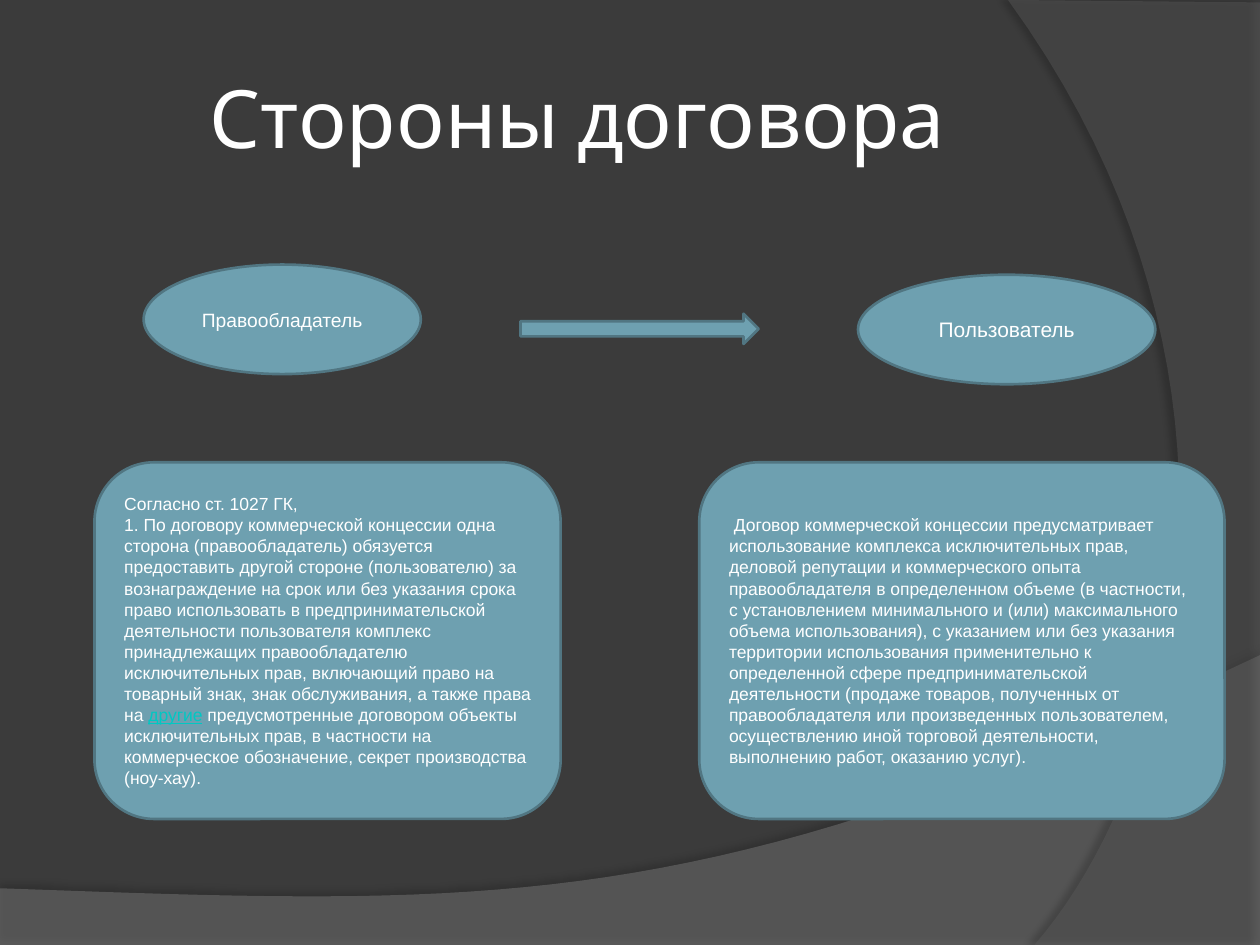
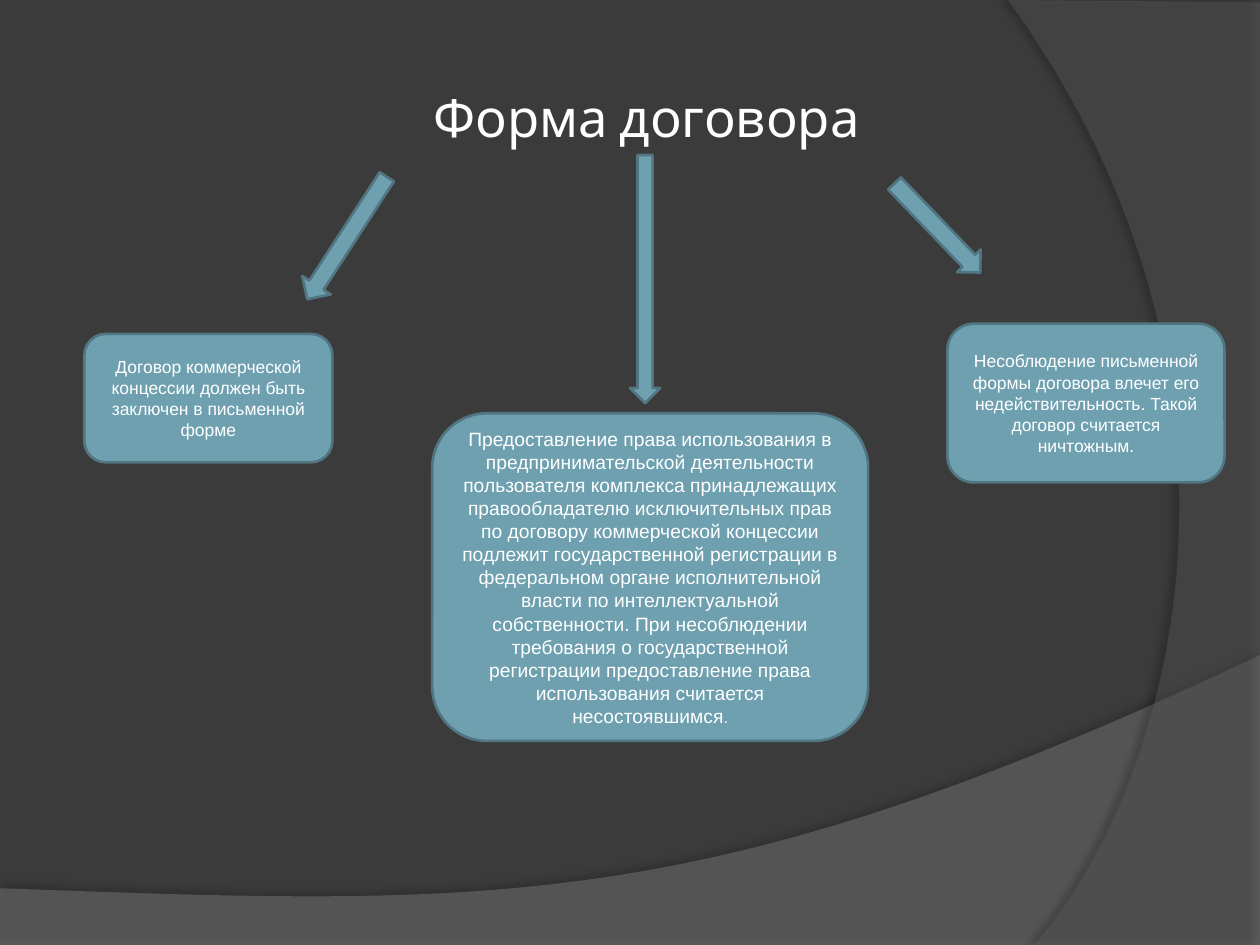
"""Build two slides on the parties to and the form of a franchise contract."""
from lxml import etree as et
from pptx import Presentation, dml, util as u
from pptx.dml import color
from pptx.enum import shapes, text
from pptx.oxml import ns

BACK, WHITE, TEAL, EDGE, LINK = "3B3B3B", "FFFFFF", "6EA0B0", "517682", "00C8C3"
WIDE, HIGH = 720, 540
KIND = shapes.MSO_SHAPE
CARD, OVAL, RIGHT, DOWN = (KIND.ROUNDED_RECTANGLE, KIND.OVAL,
                           KIND.RIGHT_ARROW, KIND.DOWN_ARROW)
LEFT, MID = text.PP_ALIGN.LEFT, text.PP_ALIGN.CENTER


def rgb(code):
    return color.RGBColor.from_string(code)


def write(shape, paras, align, size, face="Arial"):
    frame = shape.text_frame
    style = {"word_wrap": True, "vertical_anchor": text.MSO_ANCHOR.MIDDLE}
    for key, val in style.items():
        setattr(frame, key, val)
    for num, runs in enumerate(paras):
        para = frame.add_paragraph() if num else frame.paragraphs[0]
        para.alignment = align
        for words, extra in runs:
            run = para.add_run()
            run.text = words
            form = {"size": u.Pt(size), "name": face, "tone": WHITE} | extra
            run.font.color.rgb = rgb(form.pop("tone"))
            for key, val in form.items():
                setattr(run.font, key, val)


floor = {"start": (0, 507.6), "lines": [(0, HIGH), (WIDE, HIGH), (WIDE, 374.4)],
         "curve": [(402.5, 524.9), (281.5, 517.7), (0, 507.6)], "end": [],
         "tone": "7F7F7F", "alpha": 45, "shade": (35, 4, 3.5, 270)}
side = {"start": (WIDE, 1.4), "lines": [(WIDE, HIGH), (591.1, HIGH)],
        "curve": [(673.2, 445.7), (733, 216), (576, 0)], "end": [(WIDE, 1.4)],
        "tone": "5E5E5E", "alpha": 40, "shade": (45, 4, 4, 180)}

grant = [
    [("Согласно ст. 1027 ГК,", {})],
    [("1. По договору коммерческой концессии одна сторона (правообладатель) "
      "обязуется предоставить другой стороне (пользователю) за вознаграждение "
      "на срок или без указания срока право использовать в предпринимательской "
      "деятельности пользователя комплекс принадлежащих правообладателю "
      "исключительных прав, включающий право на товарный знак, знак "
      "обслуживания, а также права на ", {}),
     ("другие", {"tone": LINK, "underline": True}),
     (" предусмотренные договором объекты исключительных прав, в частности "
      "на коммерческое обозначение, секрет производства (ноу-хау).", {})]]
scope = [[(
    " Договор коммерческой концессии предусматривает использование комплекса "
    "исключительных прав, деловой репутации и коммерческого опыта "
    "правообладателя в определенном объеме (в частности, с установлением "
    "минимального и (или) максимального объема использования), с указанием или "
    "без указания территории использования применительно к определенной сфере "
    "предпринимательской деятельности (продаже товаров, полученных от "
    "правообладателя или произведенных пользователем, осуществлению иной "
    "торговой деятельности, выполнению работ, оказанию услуг).", {})]]
paper = [[("Договор коммерческой концессии должен быть заключен в письменной "
           "форме", {})]]
state = [[(
    "Предоставление права использования в предпринимательской деятельности "
    "пользователя комплекса принадлежащих правообладателю исключительных прав "
    "по договору коммерческой концессии подлежит государственной регистрации "
    "в федеральном органе исполнительной власти по интеллектуальной "
    "собственности. При несоблюдении требования о государственной регистрации "
    "предоставление права использования считается несостоявшимся", {}),
    (".", {"size": u.Pt(9)})]]
breach = [[("Несоблюдение письменной формы договора влечет его "
            "недействительность. Такой договор считается ничтожным.", {})]]
owner = [[("Правообладатель", {})]]
user = [[("Пользователь", {})]]

pages = [
    {"title": "Стороны договора", "size": 46, "align": MID, "indent": 0,
     "items": [
         (CARD, (54, 264.2, 266.4, 203.8), grant, LEFT, 10),
         (OVAL, (82.1, 151.2, 158.4, 62.6), owner, MID, 11),
         (CARD, (399.6, 264.2, 300.2, 203.8), scope, LEFT, 10),
         (OVAL, (490.3, 157, 169.9, 62.6), user, MID, 12)],
     "arrows": [(RIGHT, (297.4, 179.3, 136.1, 17.3), 0, 0.5)]},
    {"title": "Форма договора", "size": 30, "align": LEFT, "indent": 208,
     "items": [
         (CARD, (48.2, 190.8, 141.8, 73.4), paper, MID, 10),
         (CARD, (247, 236.2, 249.1, 187.2), state, MID, 11),
         (CARD, (541.4, 185, 158.4, 90.7), breach, MID, 10)],
     "arrows": [(DOWN, (188.6, 94.3, 19.4, 83.5), 33, 0.5),
                (DOWN, (360, 88.6, 17.3, 141.8), 0, 0.5),
                (DOWN, (526.3, 95, 18.7, 70.6), 316.1, 0.54)]}]

deck = Presentation()
deck.slide_width, deck.slide_height = u.Pt(WIDE), u.Pt(HIGH)

for page in pages:
    slide = deck.slides.add_slide(deck.slide_layouts[6])
    slide.background.fill.solid()
    slide.background.fill.fore_color.rgb = rgb(BACK)

    for band in (floor, side):
        dots = list(band["lines"])
        knots = [dots[-1], *band["curve"]]
        for step in range(1, 41):
            t = step / 40
            parts = ((1 - t) ** 3, 3 * t * (1 - t) ** 2, 3 * t * t * (1 - t), t ** 3)
            dots.append([sum(w * k[axis] for w, k in zip(parts, knots))
                         for axis in (0, 1)])
        dots += band["end"]
        pen = slide.shapes.build_freeform(*map(u.Pt, band["start"]))
        pen.add_line_segments([(u.Pt(x), u.Pt(y)) for x, y in dots])
        wave = pen.convert_to_shape()
        wave.fill.solid()
        wave.fill.fore_color.rgb = rgb(band["tone"])
        wave.line.fill.background()
        wave.shadow.inherit = False
        props = wave.element.spPr
        tint = props.find(ns.qn("a:solidFill"))[0]
        et.SubElement(tint, ns.qn("a:alpha"), val=str(band["alpha"] * 1000))
        dark, blur, dist, turn = band["shade"]
        cast = et.SubElement(props.find(ns.qn("a:effectLst")), ns.qn("a:outerShdw"),
                             blurRad=str(u.Pt(blur)), dist=str(u.Pt(dist)),
                             dir=str(turn * 60000), rotWithShape="0")
        black = et.SubElement(cast, ns.qn("a:srgbClr"), val="000000")
        et.SubElement(black, ns.qn("a:alpha"), val=str(dark * 1000))

    head = slide.shapes.add_textbox(*map(u.Pt, (36, 21.6, 588.2, 90)))
    for edge in ("left", "right", "top", "bottom"):
        setattr(head.text_frame, f"margin_{edge}", u.Pt(3.6))
    write(head, [[(page["title"], {})]], page["align"], page["size"], "Cabin")
    props = head.text_frame.paragraphs[0]._p.get_or_add_pPr()
    props.set("marL", str(u.Pt(page["indent"])))

    arrows = [(kind, box, None, MID, 10, turn, neck)
              for kind, box, turn, neck in page["arrows"]]
    items = [(*item, 0, None) for item in page["items"]]
    for kind, box, paras, align, size, turn, neck in arrows + items:
        shape = slide.shapes.add_shape(kind, *map(u.Pt, box))
        shape.fill.solid()
        shape.fill.fore_color.rgb = rgb(TEAL)
        shape.line.color.rgb = rgb(EDGE)
        shape.line.width = u.Pt(1.5)
        shape.shadow.inherit = False
        shape.rotation = turn
        if neck:
            shape.adjustments[0] = neck
        if paras:
            write(shape, paras, align, size)

deck.save("out.pptx")
